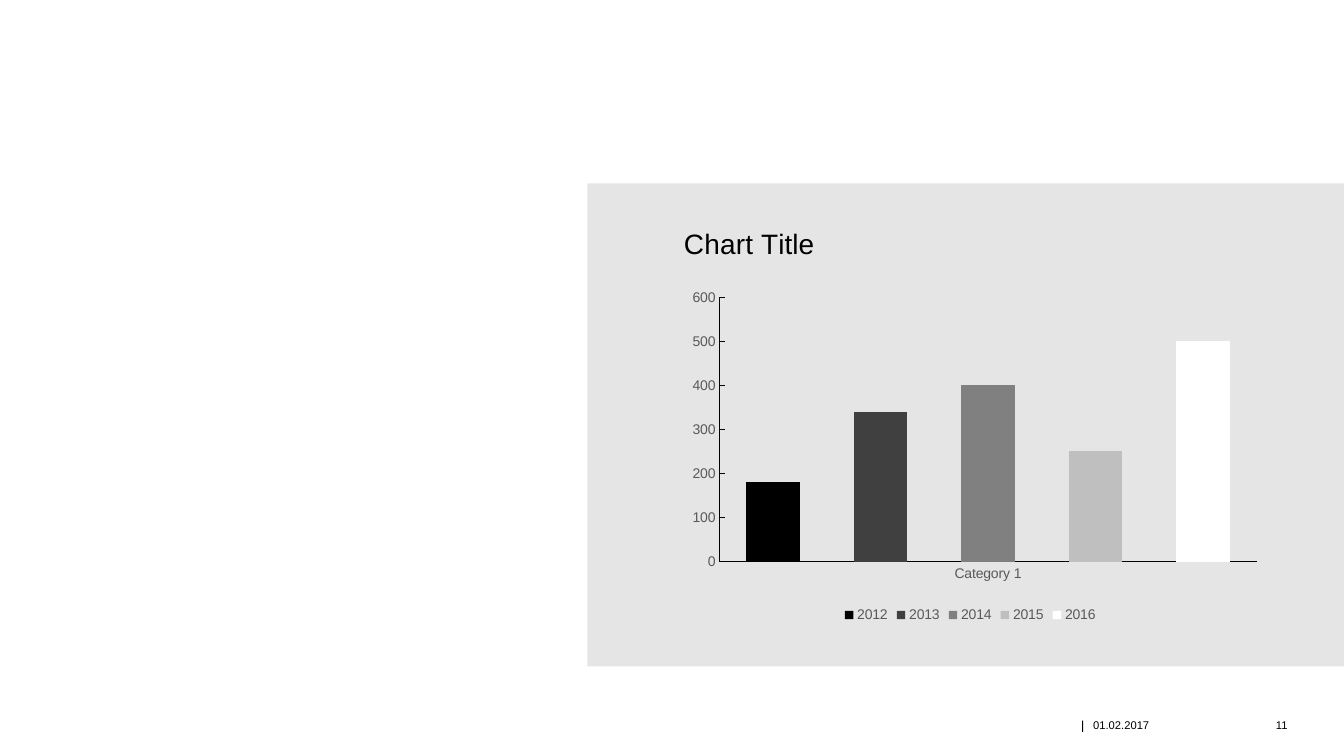
from lxml.etree import SubElement
from pptx import Presentation
from pptx.chart.data import CategoryChartData
from pptx.dml.color import RGBColor
from pptx.enum.chart import XL_CHART_TYPE, XL_LEGEND_POSITION, XL_TICK_MARK
from pptx.enum.shapes import MSO_SHAPE
from pptx.enum.text import MSO_ANCHOR, PP_ALIGN
from pptx.oxml.ns import qn
from pptx.util import Pt

CHART_TITLE = "Chart Title"
CATEGORIES = ["Category 1"]
YEARS = [
    ("2012", 180, "000000"),
    ("2013", 340, "404040"),
    ("2014", 400, "808080"),
    ("2015", 250, "BFBFBF"),
    ("2016", 500, "FFFFFF"),
]
FOOTER = [
    ("01.02.2017", 781.2, 105.12, PP_ALIGN.LEFT),
    ("11", 892.08, 28.08, PP_ALIGN.RIGHT),
]
FOOTER_TOP, FOOTER_HEIGHT = 503.28, 28.8
SLIDE_SIZE = (960.48, 540)
PANEL_BOX = (419.76, 131.04, 540.72, 344.88)
DIVIDER_BOX = (773.28, 514.8, 0.72, 7.92)
CHART_BOX = (480.96, 149.04, 424.8, 298.8)
TITLE_LAYOUT = {"xMode": "edge", "yMode": "edge", "x": 0.01, "y": 0.03}
PLOT_LAYOUT = {
    "layoutTarget": "inner", "xMode": "edge", "yMode": "edge",
    "x": 0.078, "y": 0.212, "w": 0.904, "h": 0.632,
}
THEME = {
    "font": "Arial", "ink": "000000", "label": "595959", "panel": "E5E5E5",
    "title_size": 20, "label_size": 10, "footer_size": 8, "axis_width": 0.75,
}


def points(box):
    return [Pt(length) for length in box]


def style_font(font, size, color):
    font.name = THEME["font"]
    font.size = Pt(THEME[size])
    font.bold = False
    font.color.rgb = RGBColor.from_string(THEME[color])


def add_block(slide, box, color):
    shape = slide.shapes.add_shape(MSO_SHAPE.RECTANGLE, *points(box))
    shape.shadow.inherit = False
    shape.fill.solid()
    shape.fill.fore_color.rgb = RGBColor.from_string(THEME[color])
    shape.line.fill.background()


def add_footer(slide, text, left, width, alignment):
    box = points((left, FOOTER_TOP, width, FOOTER_HEIGHT))
    frame = slide.shapes.add_textbox(*box).text_frame
    frame.word_wrap = True
    frame.vertical_anchor = MSO_ANCHOR.MIDDLE
    frame.margin_left = frame.margin_right = frame.margin_top = frame.margin_bottom = 0
    paragraph = frame.paragraphs[0]
    paragraph.alignment = alignment
    run = paragraph.add_run()
    run.text = text
    style_font(run.font, "footer_size", "ink")


def set_layout(parent, index, settings):
    for layout in parent.findall(qn("c:layout")):
        parent.remove(layout)
    layout = SubElement(parent, qn("c:layout"))
    manual = SubElement(layout, qn("c:manualLayout"))
    for name, value in settings.items():
        SubElement(manual, qn(f"c:{name}")).set("val", str(value))
    parent.insert(index, layout)


def style_axis(axis, tick_mark):
    axis.has_major_gridlines = False
    axis.major_tick_mark = tick_mark
    axis.minor_tick_mark = XL_TICK_MARK.NONE
    axis.format.line.color.rgb = RGBColor.from_string(THEME["ink"])
    axis.format.line.width = Pt(THEME["axis_width"])
    style_font(axis.tick_labels.font, "label_size", "label")


def add_year_chart(slide):
    data = CategoryChartData()
    data.categories = CATEGORIES
    for year, value, color in YEARS:
        data.add_series(year, [value])
    chart = slide.shapes.add_chart(
        XL_CHART_TYPE.COLUMN_CLUSTERED, *points(CHART_BOX), data
    ).chart
    style_font(chart.font, "label_size", "ink")

    chart.has_title = True
    run = chart.chart_title.text_frame.paragraphs[0].add_run()
    run.text = CHART_TITLE
    style_font(run.font, "title_size", "ink")
    chart_element = chart.element.find(qn("c:chart"))
    set_layout(chart_element.find(qn("c:title")), 1, TITLE_LAYOUT)
    set_layout(chart_element.find(qn("c:plotArea")), 0, PLOT_LAYOUT)

    plot = chart.plots[0]
    plot.gap_width = 100
    plot.overlap = -100
    plot.vary_by_categories = False
    for series, (year, value, color) in zip(plot.series, YEARS):
        series.format.fill.solid()
        series.format.fill.fore_color.rgb = RGBColor.from_string(color)
        series.format.line.fill.background()

    style_axis(chart.category_axis, XL_TICK_MARK.NONE)
    style_axis(chart.value_axis, XL_TICK_MARK.INSIDE)
    chart.value_axis.minimum_scale = 0
    chart.value_axis.maximum_scale = 600
    chart.value_axis.major_unit = 100

    chart.has_legend = True
    chart.legend.position = XL_LEGEND_POSITION.BOTTOM
    chart.legend.include_in_layout = False
    style_font(chart.legend.font, "label_size", "label")


def main():
    presentation = Presentation()
    presentation.slide_width, presentation.slide_height = points(SLIDE_SIZE)
    slide = presentation.slides.add_slide(presentation.slide_layouts[6])
    add_block(slide, DIVIDER_BOX, "ink")
    add_block(slide, PANEL_BOX, "panel")
    add_year_chart(slide)
    for entry in FOOTER:
        add_footer(slide, *entry)
    presentation.save("out.pptx")


if __name__ == "__main__":
    main()
